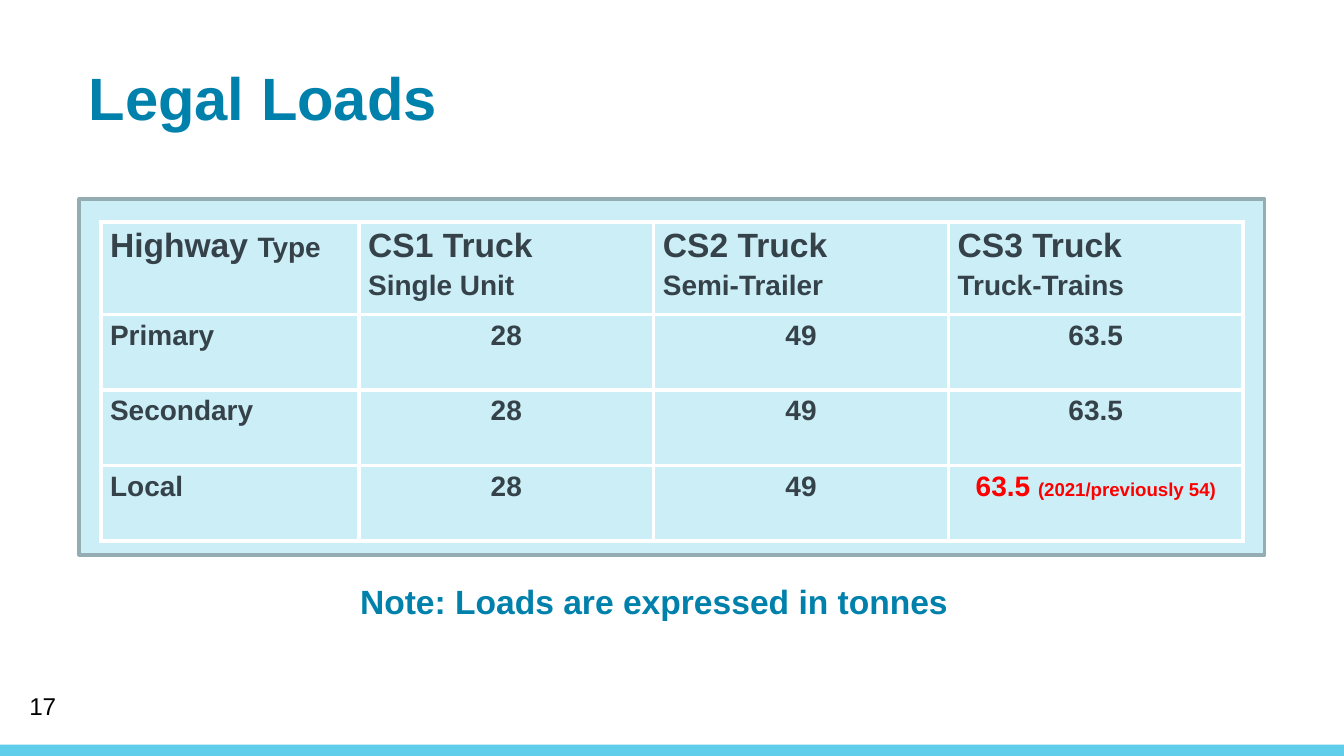
from lxml.etree import SubElement
from pptx import Presentation
from pptx.dml.color import RGBColor
from pptx.enum.shapes import MSO_SHAPE
from pptx.enum.text import MSO_ANCHOR, PP_ALIGN
from pptx.oxml.ns import qn
from pptx.util import Pt

TEAL, SLATE, RED, BLACK = "0081AB", "36424A", "FF0000", "000000"
PALE, SKY, GREY, WHITE = "CCEEF6", "5FCEEA", "94ADB3", "FFFFFF"

HEADERS = [
    [[("Highway ", 18), ("Type", 15)]],
    [[("CS1 Truck", 18)], [("Single Unit", 15)]],
    [[("CS2 Truck", 18)], [("Semi-Trailer", 15)]],
    [[("CS3 Truck", 18)], [("Truck-Trains", 15)]],
]
LOADS = [
    ("Primary", "28", "49", "63.5"),
    ("Secondary", "28", "49", "63.5"),
    ("Local", "28", "49", "63.5 "),
]


def rgb(color):
    """Return the colour for a hex string."""
    return RGBColor.from_string(color)


def style(r, size, color, bold=True):
    """Format one run."""
    r.font.name = "Arial"
    r.font.size = Pt(size)
    r.font.bold = bold
    r.font.color.rgb = rgb(color)


def set_margins(obj, side, top, bottom):
    """Set the inner margins of a cell or text frame."""
    obj.margin_left = obj.margin_right = Pt(side)
    obj.margin_top, obj.margin_bottom = Pt(top), Pt(bottom)


def add_rect(s, box, fill, line=None):
    """Add a filled rectangle, outlined if a line colour is given."""
    sp = s.shapes.add_shape(MSO_SHAPE.RECTANGLE, *map(Pt, box))
    sp.shadow.inherit = False
    sp.fill.solid()
    sp.fill.fore_color.rgb = rgb(fill)
    if line:
        sp.line.color.rgb = rgb(line)
        sp.line.width = Pt(2)
    else:
        sp.line.fill.background()


def add_text(s, box, text, size, color, bold, anchor):
    """Add a one-line text box."""
    tf = s.shapes.add_textbox(*map(Pt, box)).text_frame
    tf.word_wrap = True
    tf.vertical_anchor = anchor
    tf.text = text
    style(tf.paragraphs[0].runs[0], size, color, bold)


def set_title(s, text):
    """Place and format the title placeholder."""
    sp = s.shapes.title
    sp.left, sp.top, sp.width, sp.height = map(Pt, (42.5, 26.6, 647.3, 41))
    tf = sp.text_frame
    set_margins(tf, 5, 6, 3)
    tf.vertical_anchor = MSO_ANCHOR.TOP
    tf.text = text
    p = tf.paragraphs[0]
    p.alignment = PP_ALIGN.LEFT
    style(p.runs[0], 32, TEAL)


def set_borders(cell):
    """Draw white borders on all sides of a cell."""
    tcPr = cell._tc.get_or_add_tcPr()
    for i, side in enumerate(("lnL", "lnR", "lnT", "lnB")):
        ln = SubElement(tcPr, qn(f"a:{side}"), w=str(Pt(2.25)))
        fill = SubElement(ln, qn("a:solidFill"))
        SubElement(fill, qn("a:srgbClr"), val=WHITE)
        tcPr.insert(i, ln)


def fill_cell(cell, lines, color=SLATE, align=PP_ALIGN.LEFT):
    """Write lines of (text, size) runs into a cell."""
    cell.fill.solid()
    cell.fill.fore_color.rgb = rgb(PALE)
    set_margins(cell, 5, 3, 3)
    set_borders(cell)
    tf = cell.text_frame
    for i, runs in enumerate(lines):
        p = tf.add_paragraph() if i else tf.paragraphs[0]
        p.alignment = align
        if i:
            p.space_before = Pt(3)
        for text, size in runs:
            r = p.add_run()
            r.text = text
            style(r, size, color)


def add_load_table(s):
    """Add the table of legal loads by highway type."""
    box = map(Pt, (54, 118.8, 612, 171.2))
    table = s.shapes.add_table(len(LOADS) + 1, len(HEADERS), *box).table
    for i, col in enumerate(table.columns):
        col.width = Pt(157.9 if i else 138.3)
    for i, row in enumerate(table.rows):
        row.height = Pt(40.5 if i else 49.7)
    for j, lines in enumerate(HEADERS):
        fill_cell(table.cell(0, j), lines)
    for i, loads in enumerate(LOADS, 1):
        for j, text in enumerate(loads):
            runs, color = [(text, 15)], SLATE
            if (i, j) == (len(LOADS), len(HEADERS) - 1):
                runs.append(("(2021/previously 54)", 10))
                color = RED
            align = PP_ALIGN.CENTER if j else PP_ALIGN.LEFT
            fill_cell(table.cell(i, j), [runs], color, align)


def main():
    """Build the slide and save it."""
    prs = Presentation()
    prs.slide_width, prs.slide_height = Pt(720), Pt(405)
    s = prs.slides.add_slide(prs.slide_layouts[5])
    add_rect(s, (0, 399, 720, 6), SKY)
    add_rect(s, (42.5, 106.6, 635, 190.6), PALE, GREY)
    set_title(s, "Legal Loads")
    add_load_table(s)
    add_text(s, (185.8, 307.6, 332.6, 29), "Note: Loads are expressed in tonnes",
             18, TEAL, True, MSO_ANCHOR.TOP)
    add_text(s, (8.6, 367.2, 162, 21.6), "17", 13, BLACK, False, MSO_ANCHOR.MIDDLE)
    prs.save("out.pptx")


if __name__ == "__main__":
    main()
